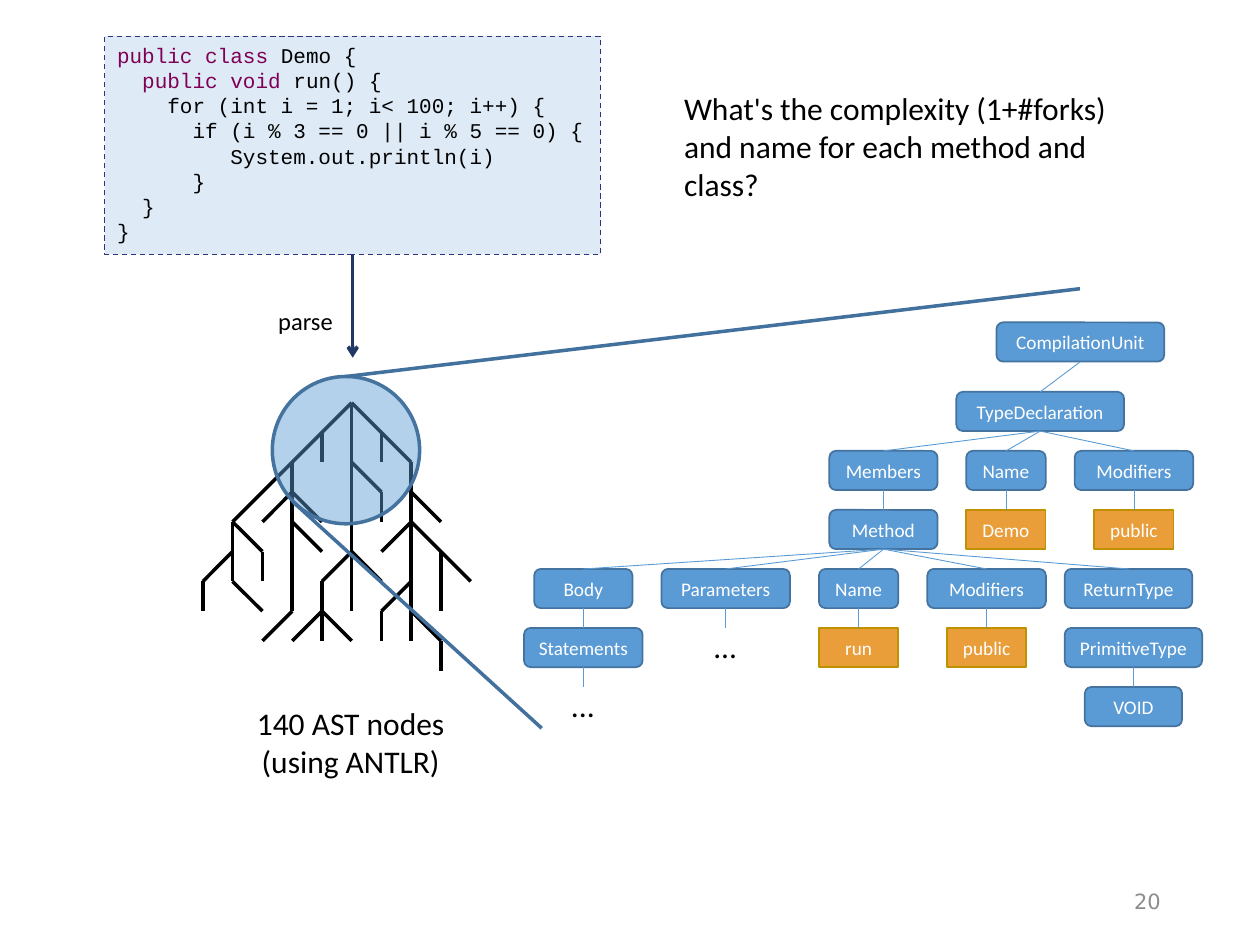
"""Build a slide on parsing a Java class into an abstract syntax tree."""
from dataclasses import dataclass

from lxml.etree import SubElement
from pptx import Presentation
from pptx.dml.color import RGBColor
from pptx.enum.dml import MSO_LINE
from pptx.enum.shapes import MSO_CONNECTOR, MSO_SHAPE
from pptx.enum.text import MSO_ANCHOR, PP_ALIGN
from pptx.oxml.ns import qn
from pptx.shapes.autoshape import Shape
from pptx.shapes.connector import Connector
from pptx.shapes.shapetree import SlideShapes
from pptx.util import Cm, Pt

BLACK = RGBColor(0x00, 0x00, 0x00)
WHITE = RGBColor(0xFF, 0xFF, 0xFF)
GREY = RGBColor(0x8C, 0x8C, 0x8C)
KEYWORD = RGBColor(0x7F, 0x00, 0x55)
CODE_FILL = RGBColor(0xDE, 0xEB, 0xF7)
CODE_BORDER = RGBColor(0x2F, 0x34, 0x7D)
NAVY = RGBColor(0x20, 0x38, 0x64)
BLUE = RGBColor(0x5B, 0x9B, 0xD5)
BLUE_BORDER = RGBColor(0x43, 0x73, 0x9E)
ZOOM_LINE = RGBColor(0x41, 0x71, 0x9C)
ORANGE = RGBColor(0xE9, 0x9E, 0x3A)
ORANGE_BORDER = RGBColor(0xBF, 0x90, 0x00)

NODE_HEIGHT = 0.79
ROOT_TOP, LEVEL_TOP, LEVEL_PITCH = 6.5, 7.9, 1.19
SKETCH_LEFT, SKETCH_TOP, SKETCH_STEP = 4.09, 8.12, 0.6

Point = tuple[float, float]


@dataclass(frozen=True)
class Node:
    """A syntax tree node, with centre and width in centimetres."""
    label: str
    center: float
    width: float
    children: tuple["Node", ...] = ()
    token: bool = False
    linked: bool = True
    elided: bool = False


CODE = [
    ("public class ", "Demo {"),
    ("  public void ", "run() {"),
    ("", "    for (int i = 1; i< 100; i++) {"),
    ("", "      if (i % 3 == 0 || i % 5 == 0) {"),
    ("", "         System.out.println(i)"),
    ("", "      }"),
    ("", "  }"),
    ("", "}"),
]

SKETCH_BRANCHES = [
    (5, 0, 5, 7), (5, 0, 7, 2), (5, 0, 1, 4), (6, 1, 6, 2), (4, 1, 4, 2),
    (5, 2, 6, 3), (6, 3, 6, 4), (7, 2, 7, 8), (7, 3, 8, 4), (7, 4, 6, 5),
    (7, 4, 9, 6), (8, 5, 8, 7), (7, 6, 6, 7), (6, 7, 6, 8), (7, 7, 8, 8),
    (8, 8, 8, 9), (5, 5, 6, 6), (5, 5, 4, 6), (4, 6, 4, 8), (4, 7, 5, 8),
    (4, 7, 3, 8), (3, 2, 3, 7), (3, 3, 2, 4), (3, 3, 4, 4), (3, 4, 4, 5),
    (3, 7, 2, 8), (1, 4, 1, 6), (1, 4, 2, 5), (2, 5, 2, 6), (1, 5, 0, 6),
    (0, 6, 0, 7), (1, 6, 2, 7),
]

METHOD = Node("Method", 17.81, 2.18, (
    Node("Body", 11.76, 1.98, (Node("Statements", 11.76, 2.39, elided=True),)),
    Node("Parameters", 14.63, 2.59, elided=True),
    Node("Name", 17.31, 1.6, (Node("run", 17.31, 1.6, token=True),)),
    Node("Modifiers", 19.89, 2.39, (Node("public", 19.89, 1.6, token=True),)),
    Node("ReturnType", 22.75, 2.57, (
        Node("PrimitiveType", 22.85, 2.77, (Node("VOID", 22.85, 1.96),), linked=False),
    )),
))

SYNTAX_TREE = Node("CompilationUnit", 21.78, 3.38, (
    Node("TypeDeclaration", 20.97, 3.38, (
        Node("Members", 17.81, 2.18, (METHOD,)),
        Node("Name", 20.28, 1.6, (Node("Demo", 20.28, 1.6, token=True),)),
        Node("Modifiers", 22.86, 2.39, (Node("public", 22.86, 1.6, token=True),)),
    )),
))


def add_line(shapes: SlideShapes, start: Point, end: Point, color: RGBColor,
             weight: float) -> Connector:
    """Draw a straight line without shadow."""
    line = shapes.add_connector(MSO_CONNECTOR.STRAIGHT, *map(Cm, start + end))
    line.line.color.rgb = color
    line.line.width = Pt(weight)
    SubElement(line._element.spPr, qn("a:effectLst"))
    return line


def add_box(shapes: SlideShapes, preset: MSO_SHAPE, left: float, top: float, width: float,
            height: float, fill: RGBColor, border: RGBColor, weight: float) -> Shape:
    """Draw a filled and outlined preset shape."""
    box = shapes.add_shape(preset, Cm(left), Cm(top), Cm(width), Cm(height))
    box.shadow.inherit = False
    box.fill.solid()
    box.fill.fore_color.rgb = fill
    box.line.color.rgb = border
    box.line.width = Pt(weight)
    return box


def add_text(shapes: SlideShapes, text: str, left: float, top: float, width: float,
             height: float, size: float = 18, align: PP_ALIGN = PP_ALIGN.LEFT,
             wrap: bool = False, color: RGBColor = BLACK, font: str = "Calibri") -> Shape:
    """Place a text box with one paragraph per line of text."""
    caption = shapes.add_textbox(Cm(left), Cm(top), Cm(width), Cm(height))
    caption.text_frame.word_wrap = wrap
    caption.text_frame.text = text
    for paragraph in caption.text_frame.paragraphs:
        paragraph.alignment = align
        paragraph.font.name = font
        paragraph.font.size = Pt(size)
        paragraph.font.color.rgb = color
    return caption


def add_code(shapes: SlideShapes) -> Shape:
    """Draw the dashed panel with the highlighted source code."""
    panel = add_box(shapes, MSO_SHAPE.RECTANGLE, 2.11, 0.73, 10, 4.4,
                    CODE_FILL, CODE_BORDER, 0.75)
    panel.line.dash_style = MSO_LINE.DASH
    frame = panel.text_frame
    frame.word_wrap = True
    frame.vertical_anchor = MSO_ANCHOR.TOP
    for number, (keywords, rest) in enumerate(CODE):
        paragraph = frame.add_paragraph() if number else frame.paragraphs[0]
        paragraph.alignment = PP_ALIGN.LEFT
        paragraph.font.name = "Courier New"
        paragraph.font.size = Pt(12)
        for text, color in ((keywords, KEYWORD), (rest, BLACK)):
            if text:
                run = paragraph.add_run()
                run.text = text
                run.font.color.rgb = color
    return panel


def level_top(level: int) -> float:
    """Return the top of a tree level in centimetres."""
    return LEVEL_TOP + (level - 1) * LEVEL_PITCH if level else ROOT_TOP


def add_node(shapes: SlideShapes, node: Node, level: int = 0) -> Shape:
    """Draw a node, its subtree and the links to its children."""
    preset, fill, border = ((MSO_SHAPE.RECTANGLE, ORANGE, ORANGE_BORDER) if node.token
                            else (MSO_SHAPE.ROUNDED_RECTANGLE, BLUE, BLUE_BORDER))
    top = level_top(level)
    box = add_box(shapes, preset, node.center - node.width / 2, top,
                  node.width, NODE_HEIGHT, fill, border, 1)
    frame = box.text_frame
    frame.margin_left = frame.margin_right = Cm(0)
    frame.vertical_anchor = MSO_ANCHOR.MIDDLE
    frame.text = node.label
    label = frame.paragraphs[0]
    label.alignment = PP_ALIGN.CENTER
    label.font.name = "Calibri"
    label.font.size = Pt(11)
    label.font.color.rgb = WHITE

    bottom = (node.center, top + NODE_HEIGHT)
    below = level_top(level + 1)
    for child in node.children:
        child_box = add_node(shapes, child, level + 1)
        if child.linked:
            link = add_line(shapes, bottom, (child.center, below), BLUE, 0.5)
            link.begin_connect(box, 2)
            link.end_connect(child_box, 0)
    if node.elided:
        stub = add_line(shapes, bottom, (node.center, below), BLUE, 0.5)
        stub.begin_connect(box, 2)
        add_text(shapes, "...", node.center - 0.5, below - 0.15, 1, 1.02)
    return box


def main() -> None:
    """Assemble and save the slide."""
    deck = Presentation()
    deck.slide_width, deck.slide_height = Cm(25.4), Cm(19.05)
    shapes = deck.slides.add_slide(deck.slide_layouts[6]).shapes

    code = add_code(shapes)
    for *start, end_column, end_row in SKETCH_BRANCHES:
        ends = [(SKETCH_LEFT + column * SKETCH_STEP, SKETCH_TOP + row * SKETCH_STEP)
                for column, row in (start, (end_column, end_row))]
        add_line(shapes, *ends, BLACK, 2)

    parse_arrow = add_line(shapes, (7.11, 5.13), (7.11, 7.21), NAVY, 2)
    parse_arrow.begin_connect(code, 2)
    SubElement(parse_arrow.line._get_or_add_ln(), qn("a:tailEnd"), type="arrow")
    add_text(shapes, "140 AST nodes\n(using ANTLR)", 4.9, 14.07, 4.34, 1.8,
             align=PP_ALIGN.CENTER)
    add_text(shapes, "parse", 5.36, 6.05, 1.63, 0.86, size=14)

    add_node(shapes, SYNTAX_TREE)

    lens = add_box(shapes, MSO_SHAPE.OVAL, 5.49, 7.59, 2.97, 2.97, BLUE, BLUE_BORDER, 2)
    lens_color = lens._element.spPr.find(qn("a:solidFill"))[0]
    SubElement(lens_color, qn("a:alpha"), val="46000")
    upper_ray = add_line(shapes, (6.97, 7.59), (21.77, 5.82), ZOOM_LINE, 2)
    upper_ray.begin_connect(lens, 0)
    add_line(shapes, (5.92, 10.13), (10.92, 14.68), ZOOM_LINE, 2)

    add_text(shapes, "What's the complexity (1+#forks) and name for each method and class?",
             13.54, 1.68, 9.45, 2.57, wrap=True)
    page_number = add_text(shapes, "20", 17.93, 17.65, 5.72, 1.02, size=12,
                           align=PP_ALIGN.RIGHT, wrap=True, color=GREY, font="DejaVu Sans")
    page_number.text_frame.vertical_anchor = MSO_ANCHOR.MIDDLE
    deck.save("out.pptx")


if __name__ == "__main__":
    main()
